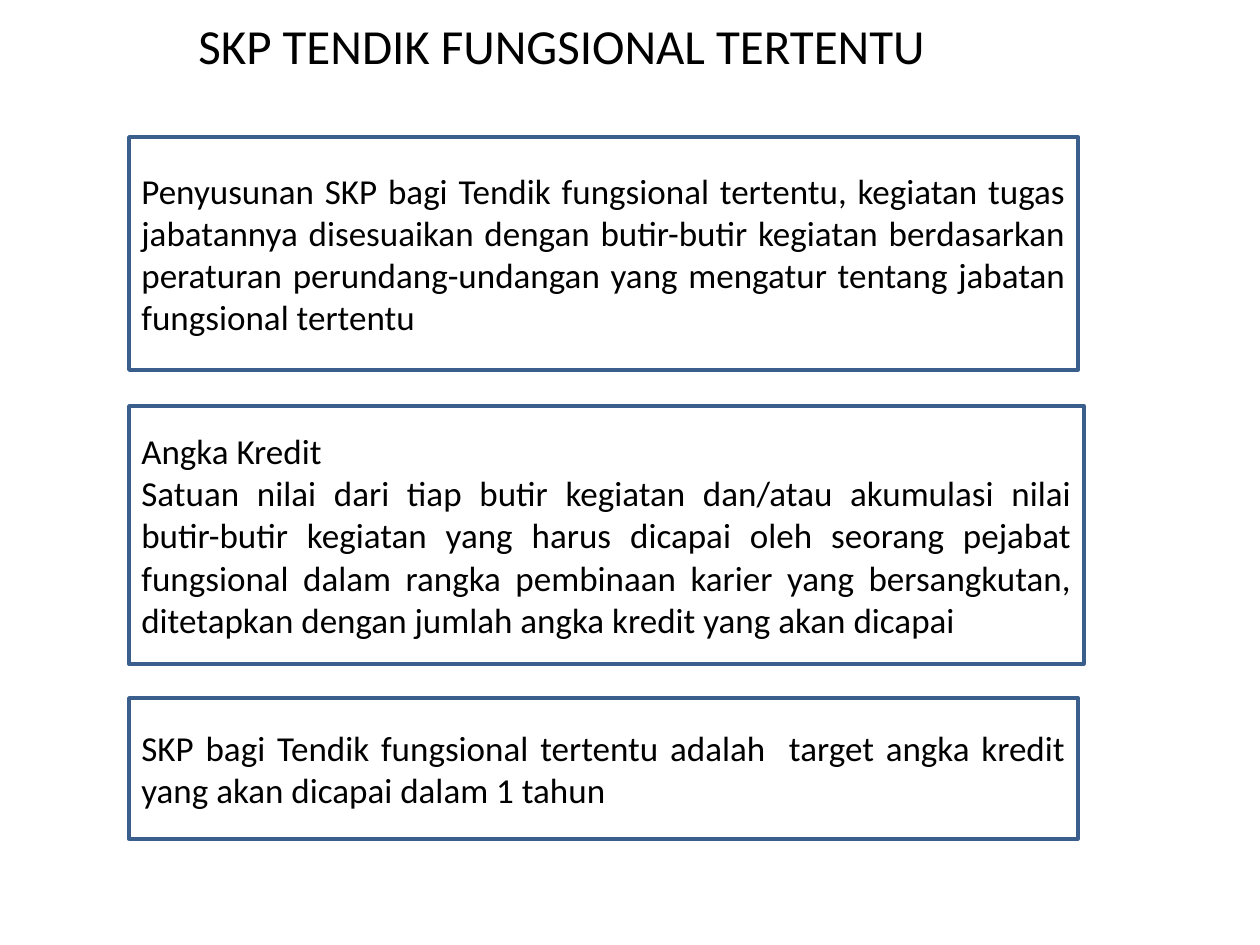
from pptx import Presentation
from pptx.dml.color import RGBColor
from pptx.enum.shapes import MSO_SHAPE
from pptx.enum.text import MSO_ANCHOR, MSO_AUTO_SIZE, PP_ALIGN
from pptx.util import Emu, Pt

RECTANGLE = MSO_SHAPE.RECTANGLE
MIDDLE = MSO_ANCHOR.MIDDLE
GROW = MSO_AUTO_SIZE.SHAPE_TO_FIT_TEXT
LEFT, JUSTIFY = PP_ALIGN.LEFT, PP_ALIGN.JUSTIFY

EMU_PER_PX = 914400 / 126
FONT = "Calibri"
COLOURS = {"text": "000000", "panel": "FFFFFF", "border": "3A5F8C"}
PANEL_LEFT = 129

PANELS = [
    (137, 949, 233, [
        "Penyusunan SKP bagi Tendik fungsional tertentu, kegiatan tugas "
        "jabatannya disesuaikan dengan butir-butir kegiatan berdasarkan "
        "peraturan perundang-undangan yang mengatur tentang jabatan "
        "fungsional tertentu",
    ]),
    (406, 955, 258, [
        "Angka Kredit",
        "Satuan nilai dari tiap butir kegiatan dan/atau akumulasi nilai "
        "butir-butir kegiatan yang harus dicapai oleh seorang pejabat "
        "fungsional dalam rangka pembinaan karier yang bersangkutan, "
        "ditetapkan dengan jumlah angka kredit yang akan dicapai",
    ]),
    (698, 949, 141, [
        "SKP bagi Tendik fungsional tertentu adalah  target angka kredit "
        "yang akan dicapai dalam 1 tahun",
    ]),
]


def px(length):
    """Turn a length in px into EMU."""
    return Emu(round(length * EMU_PER_PX))


def colour(role):
    """Return the colour used for a role."""
    return RGBColor.from_string(COLOURS[role])


def write_paragraphs(frame, texts, size, alignment):
    """Fill a text frame with one run per paragraph."""
    frame.word_wrap = True
    for index, text in enumerate(texts):
        paragraph = frame.add_paragraph() if index else frame.paragraphs[0]
        paragraph.alignment = alignment
        run = paragraph.add_run()
        run.text = text
        run.font.name = FONT
        run.font.size = Pt(size)
        run.font.color.rgb = colour("text")


def add_title(slide, text):
    """Add the slide heading."""
    title = slide.shapes.add_textbox(px(186), px(9), px(916), px(72))
    write_paragraphs(title.text_frame, [text], 28, LEFT)
    title.text_frame.auto_size = GROW


def add_panel(slide, top, width, height, texts):
    """Add a bordered panel of justified text."""
    panel = slide.shapes.add_shape(
        RECTANGLE, px(PANEL_LEFT), px(top), px(width), px(height))
    panel.shadow.inherit = False
    panel.fill.solid()
    panel.fill.fore_color.rgb = colour("panel")
    panel.line.color.rgb = colour("border")
    panel.line.width = Pt(2)
    panel.text_frame.vertical_anchor = MIDDLE
    write_paragraphs(panel.text_frame, texts, 20, JUSTIFY)


def main():
    """Build and save the slide."""
    presentation = Presentation()
    presentation.slide_width = px(1260)
    presentation.slide_height = px(945)
    slide = presentation.slides.add_slide(presentation.slide_layouts[6])
    add_title(slide, "SKP TENDIK FUNGSIONAL TERTENTU")
    for top, width, height, texts in PANELS:
        add_panel(slide, top, width, height, texts)
    presentation.save("out.pptx")


if __name__ == "__main__":
    main()
